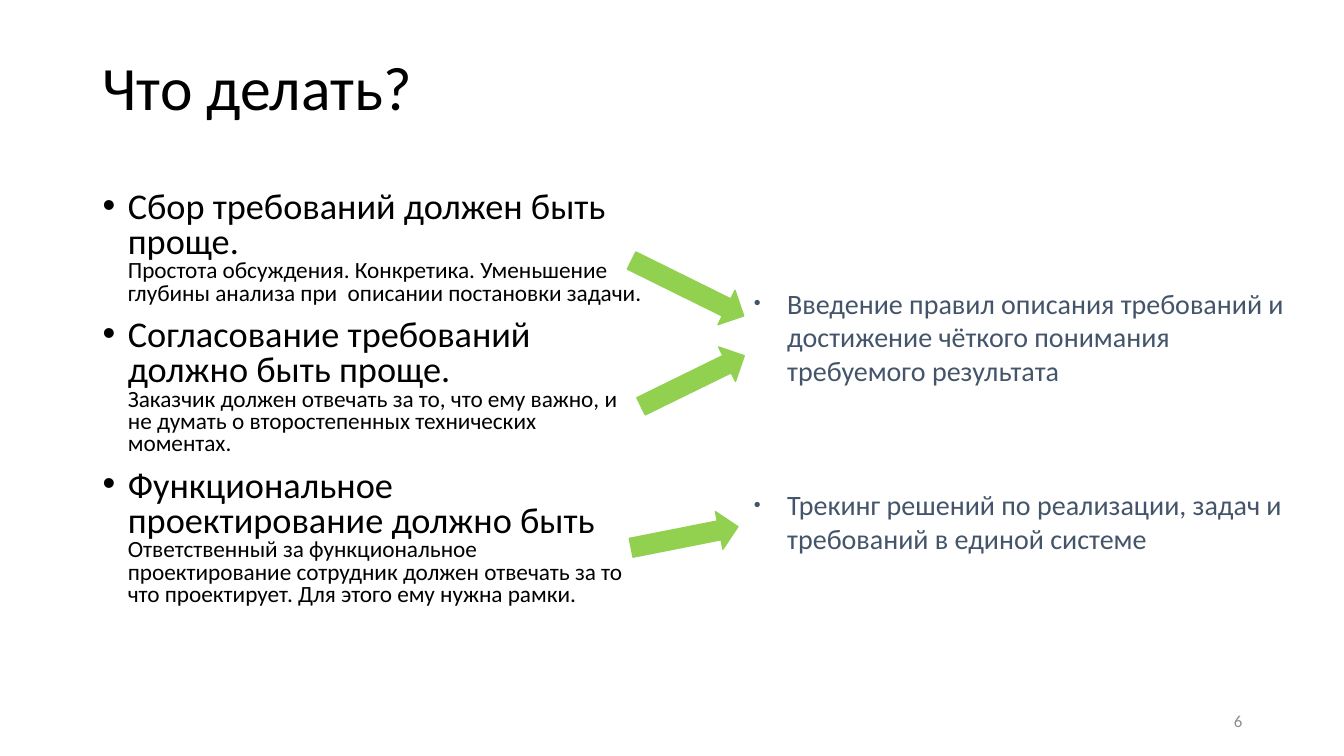
from dataclasses import dataclass

from lxml import etree
from pptx import Presentation, util as u
from pptx.dml.color import RGBColor
from pptx.enum import shapes, text
from pptx.oxml import parse_xml
from pptx.oxml.ns import nsdecls, qn

PX = 9144  # EMU in one px, 100 px to the inch
FONT = "Calibri"
HUES = {"ink": "000000", "slate": "44546A", "green": "92D050",
        "grey": "8C8C8C", "edge": "FFFFFF"}


@dataclass
class Box:
    left: int
    top: int
    width: int
    height: int

    def emu(self) -> list[int]:
        return [n * PX for n in (self.left, self.top, self.width, self.height)]


@dataclass
class Need:
    head: str
    body: str


@dataclass
class Step:
    words: str
    before: int


@dataclass
class Arrow:
    box: Box
    turn: float


NEEDS = [
    Need("Сбор требований должен быть проще. ",
         "Простота обсуждения. Конкретика. Уменьшение глубины анализа "
         "при  описании постановки задачи."),
    Need("Согласование требований должно быть проще. ",
         "Заказчик должен отвечать за то, что ему важно, и не думать "
         "о второстепенных технических моментах."),
    Need("Функциональное проектирование должно быть ",
         "Ответственный за функциональное проектирование сотрудник должен "
         "отвечать за то что проектирует. Для этого ему нужна рамки."),
]
STEPS = [
    Step("Введение правил описания требований и достижение чёткого "
         "понимания требуемого результата", 0),
    Step("Трекинг решений по реализации, задач и требований в единой системе", 66),
]
ARROWS = [
    Arrow(Box(620, 267, 124, 38), 26.3),
    Arrow(Box(630, 359, 114, 38), 333.9),
    Arrow(Box(625, 514, 108, 38), 348.8),
]


def color(name: str) -> RGBColor:
    return RGBColor.from_string(HUES[name])


def frame(slide, box: Box, anchor=text.MSO_ANCHOR.TOP):
    area = slide.shapes.add_textbox(*box.emu()).text_frame
    area.word_wrap = True
    area.vertical_anchor = anchor
    return area


def style(font, hue: str, size: float | None = None) -> None:
    font.name = FONT
    font.color.rgb = color(hue)
    if size:
        font.size = u.Pt(size)


def bullet(para, left: int, hang: int, hue: str, share: int = 100) -> None:
    props = para._p.get_or_add_pPr()
    props.set("marL", str(left * PX))
    props.set("indent", str(-hang * PX))
    tint = etree.SubElement(props, qn("a:buClr"))
    etree.SubElement(tint, qn("a:srgbClr"), val=HUES[hue])
    etree.SubElement(props, qn("a:buSzPct"), val=str(share * 1000))
    etree.SubElement(props, qn("a:buFont"), typeface="Arial")
    etree.SubElement(props, qn("a:buChar"), char="•")


def shade(run) -> None:
    """Give a run a faint outline and a soft shadow."""
    props = run._r.get_or_add_rPr()
    props.append(parse_xml(
        f'<a:ln {nsdecls("a")} w="9525"><a:solidFill>'
        f'<a:srgbClr val="{HUES["edge"]}"><a:alpha val="10000"/></a:srgbClr>'
        '</a:solidFill></a:ln>'))
    props.append(parse_xml(
        f'<a:effectLst {nsdecls("a")}>'
        '<a:outerShdw blurRad="38100" dist="25400" dir="2700000">'
        f'<a:srgbClr val="{HUES["ink"]}"><a:alpha val="40000"/></a:srgbClr>'
        '</a:outerShdw></a:effectLst>'))


def line(slide, box: Box, words: str, size: int, hue: str, align) -> None:
    para = frame(slide, box, text.MSO_ANCHOR.MIDDLE).paragraphs[0]
    para.text = words
    para.alignment = align
    style(para.font, hue, size)


def needs(slide, box: Box) -> None:
    area = frame(slide, box)
    for i, need in enumerate(NEEDS):
        para = area.add_paragraph() if i else area.paragraphs[0]
        para.line_spacing = 0.8
        para.space_before = u.Pt(10)
        bullet(para, 25, 25, "ink")
        style(para.font, "ink")
        head = para.add_run()
        head.text, head.font.size = need.head, u.Pt(25.9)
        para.add_line_break()
        body = para.add_run()
        body.text, body.font.size = need.body, u.Pt(16.6)


def steps(slide, box: Box) -> None:
    area = frame(slide, box)
    for i, step in enumerate(STEPS):
        para = area.add_paragraph() if i else area.paragraphs[0]
        para.space_before = u.Pt(step.before)
        para.space_after = u.Pt(6)
        bullet(para, 38, 33, "slate", 70)
        style(para.font, "slate", 20)
        run = para.add_run()
        run.text = step.words
        shade(run)


def point(slide, arrow: Arrow) -> None:
    shape = slide.shapes.add_shape(
        shapes.MSO_SHAPE.RIGHT_ARROW, *arrow.box.emu())
    shape.rotation = arrow.turn
    shape.shadow.inherit = False
    shape.fill.solid()
    shape.fill.fore_color.rgb = color("green")
    shape.line.color.rgb = color("green")
    shape.line.width = u.Pt(1)


def main() -> None:
    deck = Presentation()
    deck.slide_width, deck.slide_height = 1333 * PX, 750 * PX
    slide = deck.slides.add_slide(deck.slide_layouts[6])

    # Title and the two lists
    line(slide, Box(92, 32, 1132, 106), "Что делать?", 44, "ink",
         text.PP_ALIGN.LEFT)
    needs(slide, Box(92, 185, 554, 491))
    steps(slide, Box(733, 279, 554, 359))

    # Arrows from needs to steps
    for arrow in ARROWS:
        point(slide, arrow)

    # Slide number
    line(slide, Box(942, 695, 300, 40), "6", 12, "grey", text.PP_ALIGN.RIGHT)
    deck.save("out.pptx")


if __name__ == "__main__":
    main()
